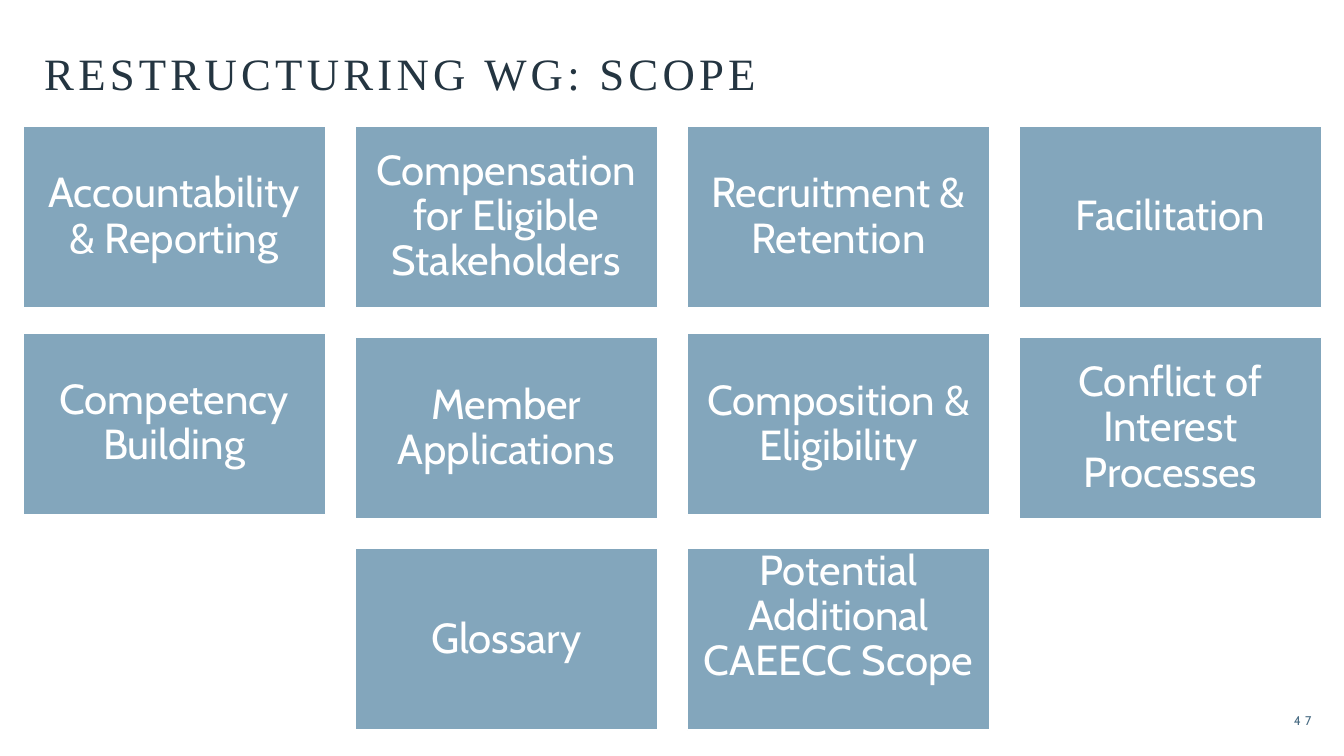
from pptx import Presentation
from pptx.dml.color import RGBColor
from pptx.enum.shapes import MSO_SHAPE as Shape
from pptx.enum.text import MSO_ANCHOR as Anchor, MSO_AUTO_SIZE as Fit, PP_ALIGN as Align
from pptx.util import Cm, Pt

LEFT, STEP = 0.58, 8.37
WIDTH, HEIGHT = 7.62, 4.57
# Column, top in cm, label
TOPICS = [
    (0, 3.18, "Accountability & Reporting"),
    (1, 3.18, "Compensation for Eligible Stakeholders"),
    (2, 3.18, "Recruitment & Retention"),
    (3, 3.18, "Facilitation"),
    (0, 8.39, "Competency Building"),
    (1, 8.51, "Member Applications"),
    (2, 8.41, "Composition & Eligibility"),
    (3, 8.51, "Conflict of Interest Processes"),
    (1, 13.83, "Glossary"),
]


def color(code):
    return RGBColor.from_string(code)


def write(frame, text, size, tint, font="Cabin", align=Align.CENTER,
          anchor=Anchor.MIDDLE, lines=0.9, track=0):
    """Fill a text frame; track is the letter spacing in points."""
    frame.word_wrap = True
    frame.auto_size = Fit.NONE
    frame.vertical_anchor = anchor
    para = frame.paragraphs[0]
    para.alignment = align
    para.line_spacing = lines
    run = para.add_run()
    run.text = text
    run.font.name = font
    run.font.size = Pt(size)
    run.font.color.rgb = color(tint)
    if track:
        run._r.get_or_add_rPr().set("spc", str(track * 100))


class Deck:
    fill, white, dark, muted = "83A6BC", "FFFFFF", "243541", "486B83"

    def __init__(self):
        self.file = Presentation()
        self.file.slide_width, self.file.slide_height = Cm(33.87), Cm(19.05)
        self.slide = self.file.slides.add_slide(self.file.slide_layouts[5])

    def title(self, text):
        head = self.slide.shapes.title
        head.left, head.top = Cm(0.86), Cm(0.48)
        head.width, head.height = Cm(26.37), Cm(2.16)
        write(head.text_frame, text, 32, self.dark, font="Times New Roman",
              align=Align.LEFT, anchor=Anchor.BOTTOM, track=3)

    def card(self, col, top, text, anchor=Anchor.MIDDLE, inset=0.3):
        box = self.slide.shapes.add_shape(
            Shape.RECTANGLE, Cm(LEFT + col * STEP), Cm(top), Cm(WIDTH), Cm(HEIGHT))
        box.shadow.inherit = False
        box.fill.solid()
        box.fill.fore_color.rgb = color(self.fill)
        box.line.color.rgb = color(self.white)
        box.line.width = Pt(1)
        frame = box.text_frame
        frame.margin_left = frame.margin_right = Cm(0.3)
        frame.margin_top = frame.margin_bottom = Cm(inset)
        write(frame, text, 30, self.white, anchor=anchor)

    def number(self, text):
        box = self.slide.shapes.add_textbox(Cm(30.89), Cm(17.65), Cm(2.41), Cm(1.02))
        write(box.text_frame, text, 9, self.muted, align=Align.RIGHT,
              lines=1.0, track=3)


def main():
    deck = Deck()
    deck.title("RESTRUCTURING WG: SCOPE")
    for col, top, text in TOPICS:
        deck.card(col, top, text)
    deck.card(2, 13.83, "Potential Additional CAEECC Scope", anchor=Anchor.TOP, inset=0)
    deck.number("47")
    deck.file.save("out.pptx")


if __name__ == "__main__":
    main()
